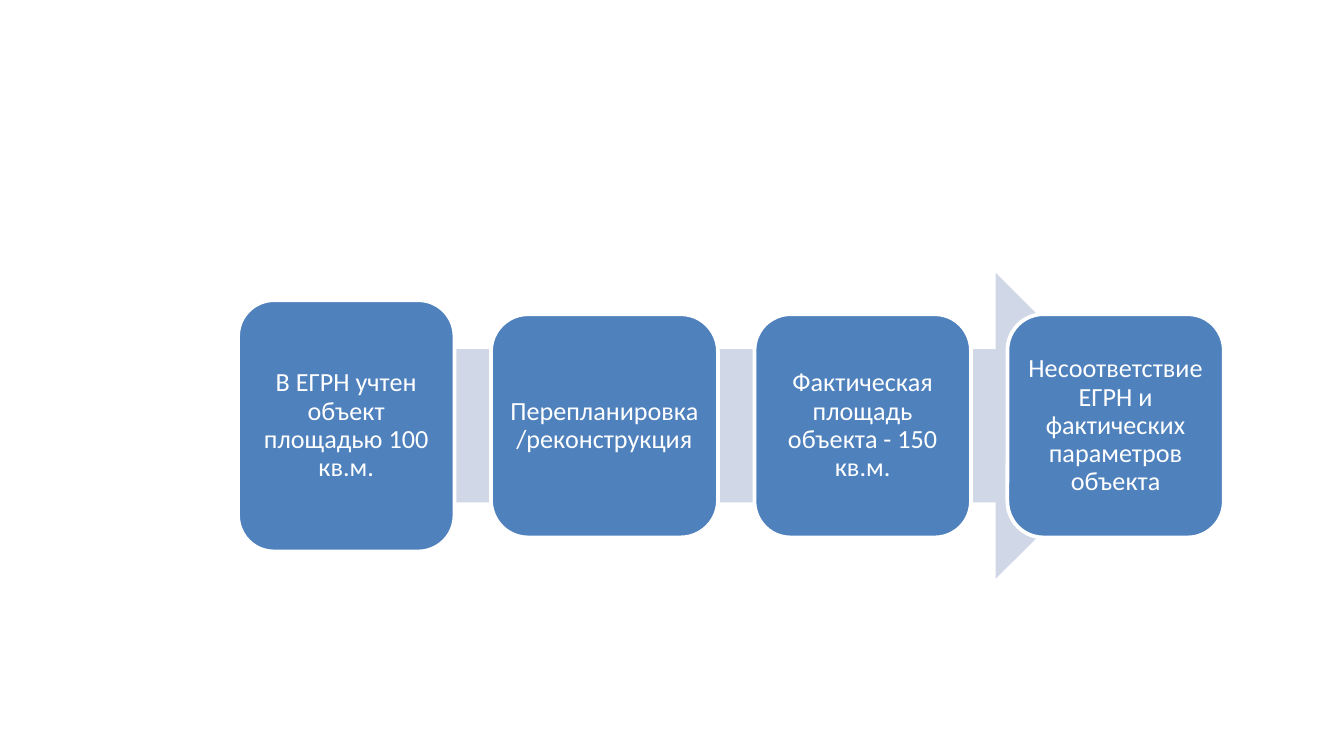
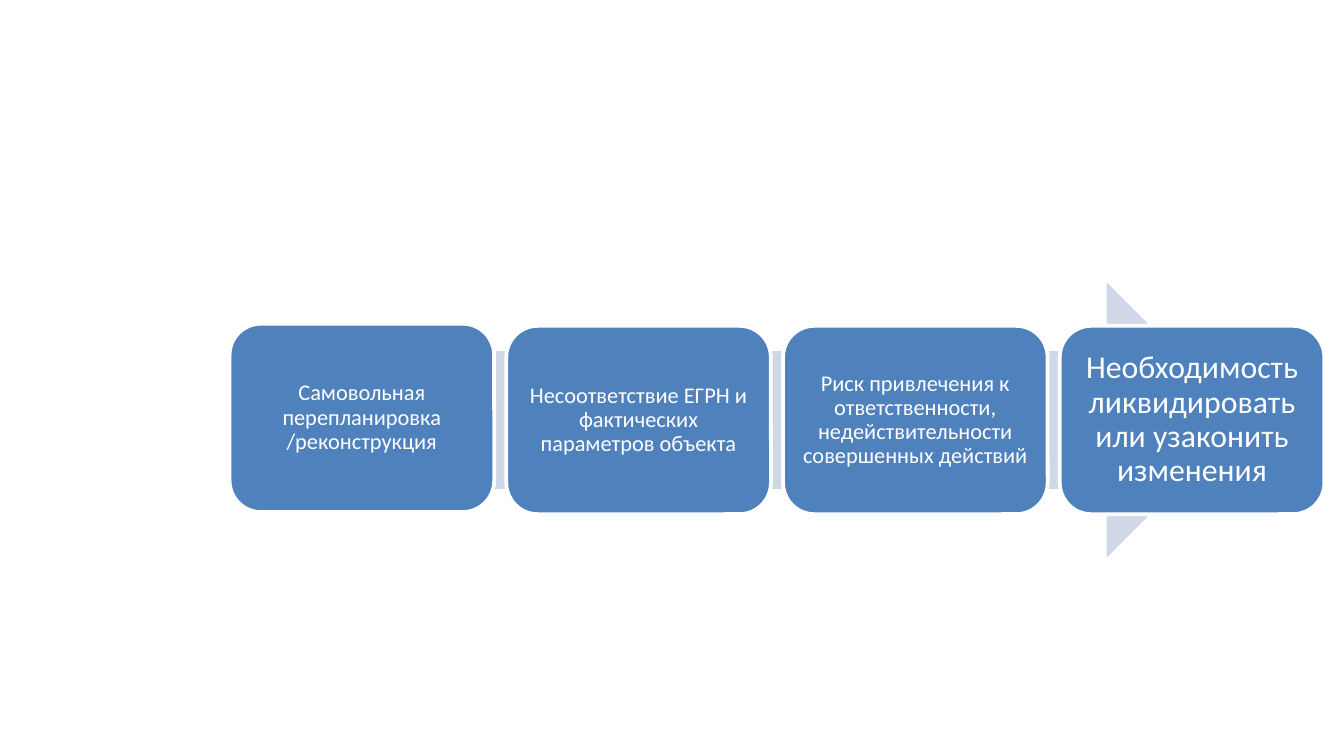
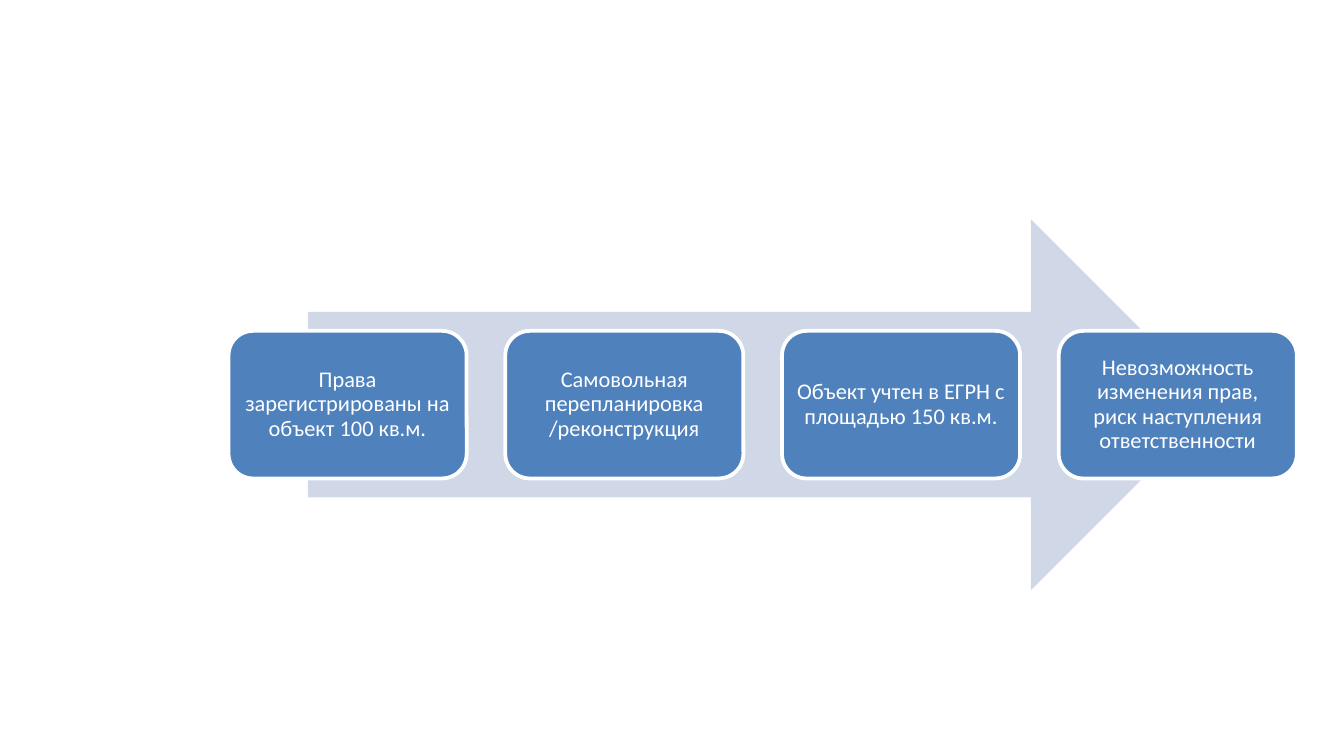
from pptx import Presentation
from pptx.dml.color import RGBColor
from pptx.enum import shapes, text
from pptx.util import Cm, Pt

WHITE = RGBColor(0xFF, 0xFF, 0xFF)
BLUE = RGBColor(0x4F, 0x81, 0xBD)
PALE = RGBColor(0xD0, 0xD8, 0xE8)
FONT = "Calibri"

PROCESSES = [
    {
        "arrow": (5.89, 15.82, 5.79), "middle": 8.05,
        "left": 4.5, "gap": 0.69, "box": (4.09, 4.22), "size": 14, "inset": 0.15,
        "steps": [
            ("В ЕГРН учтен объект площадью 100 кв.м.", {"box": (4.09, 4.75)}),
            ("Перепланировка /реконструкция", {"box": (4.29, 4.22)}),
            ("Фактическая площадь объекта - 150 кв.м.", {}),
            ("Несоответствие ЕГРН и фактических параметров объекта", {}),
        ],
    },
    {
        "arrow": (5.87, 17.65, 5.21), "middle": 7.94,
        "left": 4.34, "gap": 0.23, "box": (5.0, 3.56), "size": 12, "inset": 0.13,
        "steps": [
            ("Самовольная перепланировка /реконструкция", {"middle": 7.9}),
            ("Несоответствие ЕГРН и фактических параметров объекта", {}),
            ("Риск привлечения к ответственности, недействительности "
             "совершенных действий", {}),
            ("Необходимость ликвидировать или узаконить изменения",
             {"size": 17, "inset": 0.18}),
        ],
    },
    {
        "arrow": (5.82, 17.17, 7.01), "middle": 7.65,
        "left": 4.32, "gap": 0.73, "box": (4.5, 2.79), "size": 12, "inset": 0.13,
        "steps": [
            ("Права зарегистрированы на объект 100 кв.м.", {}),
            ("Самовольная перепланировка /реконструкция", {}),
            ("Объект учтен в ЕГРН с площадью 150 кв.м.", {}),
            ("Невозможность изменения прав, риск наступления ответственности", {}),
        ],
    },
]


def add_centred(slide, kind, left, middle, width, height, color):
    sp = slide.shapes.add_shape(
        kind, Cm(left), Cm(middle - height / 2), Cm(width), Cm(height))
    sp.shadow.inherit = False
    sp.fill.solid()
    sp.fill.fore_color.rgb = color
    sp.line.fill.background()
    return sp


def add_step(slide, label, left, style):
    sp = add_centred(slide, shapes.MSO_SHAPE.ROUNDED_RECTANGLE,
                     left, style["middle"], *style["box"], BLUE)
    sp.line.color.rgb = WHITE
    sp.line.width = Pt(2)
    tf = sp.text_frame
    tf.word_wrap = True
    tf.vertical_anchor = text.MSO_ANCHOR.MIDDLE
    tf.margin_left = tf.margin_right = Cm(style["inset"])
    tf.margin_top = tf.margin_bottom = Cm(style["inset"])
    p = tf.paragraphs[0]
    p.text = label
    p.alignment = text.PP_ALIGN.CENTER
    p.line_spacing = 0.9
    p.font.name = FONT
    p.font.size = Pt(style["size"])
    p.font.color.rgb = WHITE


def add_process(prs, process):
    slide = prs.slides.add_slide(prs.slide_layouts[6])
    left, width, height = process["arrow"]
    add_centred(slide, shapes.MSO_SHAPE.RIGHT_ARROW,
                left, process["middle"], width, height, PALE)
    left = process["left"]
    for label, changes in process["steps"]:
        style = {**process, **changes}
        add_step(slide, label, left, style)
        left += style["box"][0] + process["gap"]


def main():
    prs = Presentation()
    prs.slide_width, prs.slide_height = Cm(25.4), Cm(14.29)
    for process in PROCESSES:
        add_process(prs, process)
    prs.save("out.pptx")


if __name__ == "__main__":
    main()
